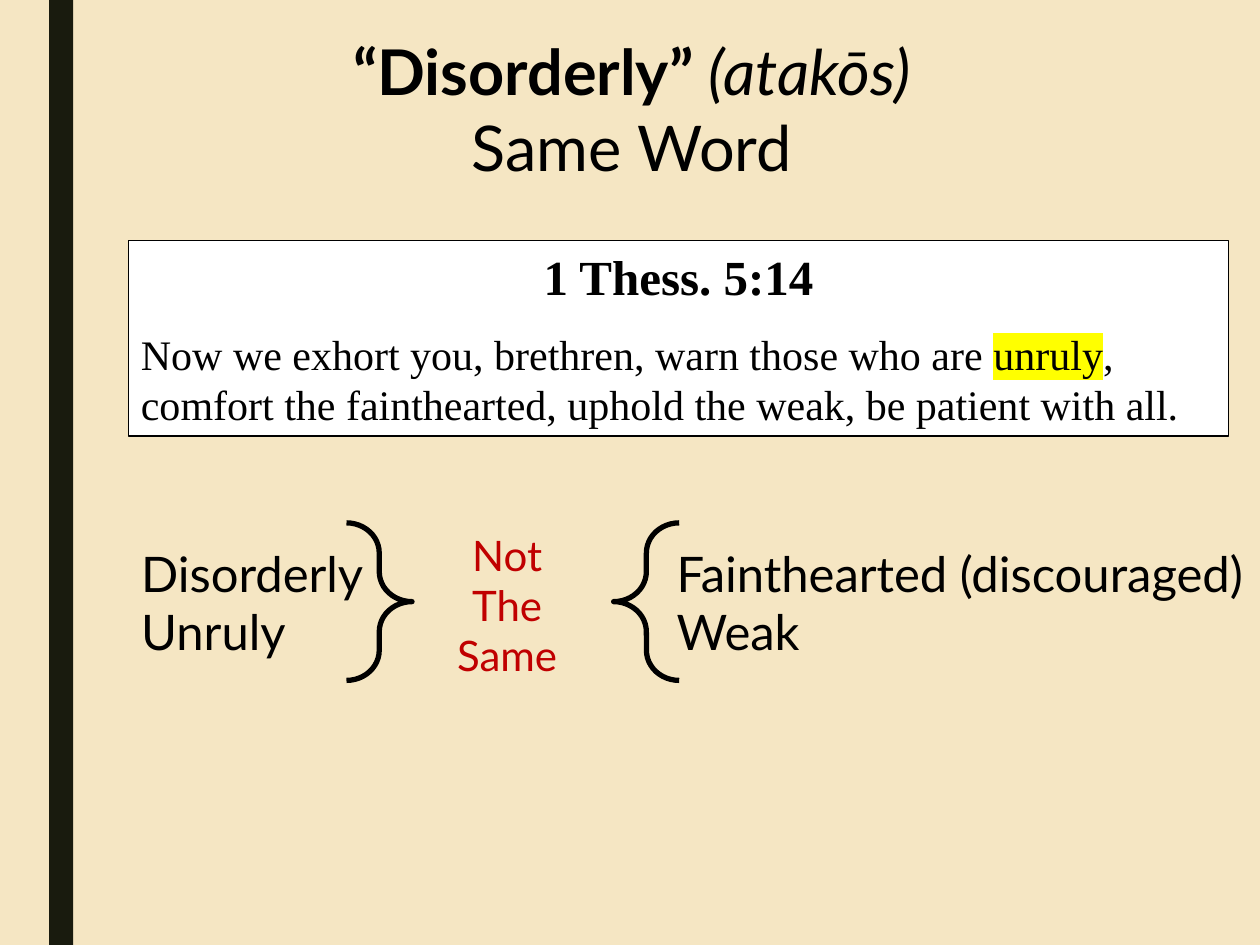
from lxml.etree import SubElement as Sub
from pptx import Presentation
from pptx.dml.color import RGBColor
from pptx.enum.shapes import MSO_SHAPE as Kind
from pptx.enum.text import MSO_ANCHOR as Anchor, MSO_AUTO_SIZE as Fit, PP_ALIGN as Align
from pptx.oxml.ns import qn
from pptx.util import Inches, Pt

SAND = RGBColor(0xF5, 0xE6, 0xC3)
BARK = RGBColor(0x19, 0x1B, 0x0E)
BLACK = RGBColor(0, 0, 0)
WHITE = RGBColor(255, 255, 255)
RED = RGBColor(0xC0, 0, 0)
SANS, SERIF = "Lato", "Times New Roman"


def place(shape, box):
    shape.left, shape.top, shape.width, shape.height = map(Inches, box)


def add_shape(slide, kind, box, fill=None, line=None):
    shape = slide.shapes.add_shape(kind, *map(Inches, box))
    shape.shadow.inherit = False
    if fill is None:
        shape.fill.background()
    else:
        shape.fill.solid()
        shape.fill.fore_color.rgb = fill
    if line is None:
        shape.line.fill.background()
    else:
        shape.line.color.rgb = BLACK
        shape.line.width = Pt(line)
    return shape


def add_brace(slide, left, flip=False):
    brace = add_shape(slide, Kind.LEFT_BRACE, (left, 4.15, 0.52, 1.25), line=3)
    brace.adjustments[0] = 0.46
    brace.adjustments[1] = 0.5
    if flip:
        brace.element.spPr.xfrm.set("flipH", "1")


def style(para, size, name=SANS, color=BLACK, align=Align.LEFT):
    para.alignment = align
    para.space_before = Pt(0)
    para.font.size = Pt(size)
    para.font.name = name
    para.font.color.rgb = color


def write(shape, lines, size, color=BLACK, align=Align.LEFT):
    """Fill a shape with one paragraph per line and return the paragraphs."""
    frame = shape.text_frame
    frame.word_wrap = True
    frame.auto_size = Fit.SHAPE_TO_FIT_TEXT
    frame.vertical_anchor = Anchor.TOP
    frame.text = "\n".join(lines)
    for para in frame.paragraphs:
        style(para, size, color=color, align=align)
    return frame.paragraphs


def fill_list(holder, box, lines):
    place(holder, box)
    for para in write(holder, lines, 28):
        props = para._p.get_or_add_pPr()
        props.set("marL", "0")
        props.set("indent", "0")
        props.insert_element_before(props.makeelement(qn("a:buNone")),
                                    "a:tabLst", "a:defRPr", "a:extLst")


def fill_title(title):
    place(title, (1.73, 0.21, 6.57, 1.31))
    head, _ = write(title, ["“Disorderly” ", "Same Word"], 36, align=Align.CENTER)
    head.runs[0].font.bold = True
    greek = head.add_run()
    greek.text = "(atakōs)"
    greek.font.italic = True


def add_verse(slide):
    box = add_shape(slide, Kind.RECTANGLE, (1.02, 1.91, 8.73, 1.55), WHITE, 0.75)
    frame = box.text_frame
    frame.word_wrap = True
    frame.vertical_anchor = Anchor.TOP
    head = frame.paragraphs[0]
    head.text = "1 Thess. 5:14"
    style(head, 28, SERIF, align=Align.CENTER)
    head.font.bold = True
    head.line_spacing = Pt(33.6)

    body = frame.add_paragraph()
    style(body, 24, SERIF)
    body.space_before = Pt(13)
    body.line_spacing = Pt(28.8)
    for text in ("Now we exhort you, brethren, warn those who are ", "unruly",
                 ", comfort the fainthearted, uphold the weak, be patient with all."):
        run = body.add_run()
        run.text = text
        if text == "unruly":
            mark = Sub(run._r.get_or_add_rPr(), qn("a:highlight"))
            Sub(mark, qn("a:srgbClr"), val="FFFF00")
    # White shape text is the default, so each run is set to black
    for para in frame.paragraphs:
        for run in para.runs:
            run.font.color.rgb = BLACK


def main():
    deck = Presentation()
    deck.slide_width, deck.slide_height = Inches(10), Inches(7.5)
    slide = deck.slides.add_slide(deck.slide_layouts[3])
    slide.background.fill.solid()
    slide.background.fill.fore_color.rgb = SAND
    title, left, right = slide.placeholders

    # Side bar, title and verse
    add_shape(slide, Kind.RECTANGLE, (0.39, 0, 0.19, 7.5), BARK)
    fill_title(title)
    add_verse(slide)

    # The two groups of words and the contrast between them
    fill_list(left, (1.02, 4.26, 3.45, 1.04), ["Disorderly", "Unruly"])
    fill_list(right, (5.27, 4.26, 4.73, 1.04), ["Fainthearted (discouraged)", "Weak"])
    add_brace(slide, 4.87)
    add_brace(slide, 2.75, flip=True)
    note = slide.shapes.add_textbox(*map(Inches, (2.59, 4.15, 2.87, 1.31)))
    write(note, ["Not", "The", "Same"], 24, RED, Align.CENTER)

    deck.save("out.pptx")


if __name__ == "__main__":
    main()
